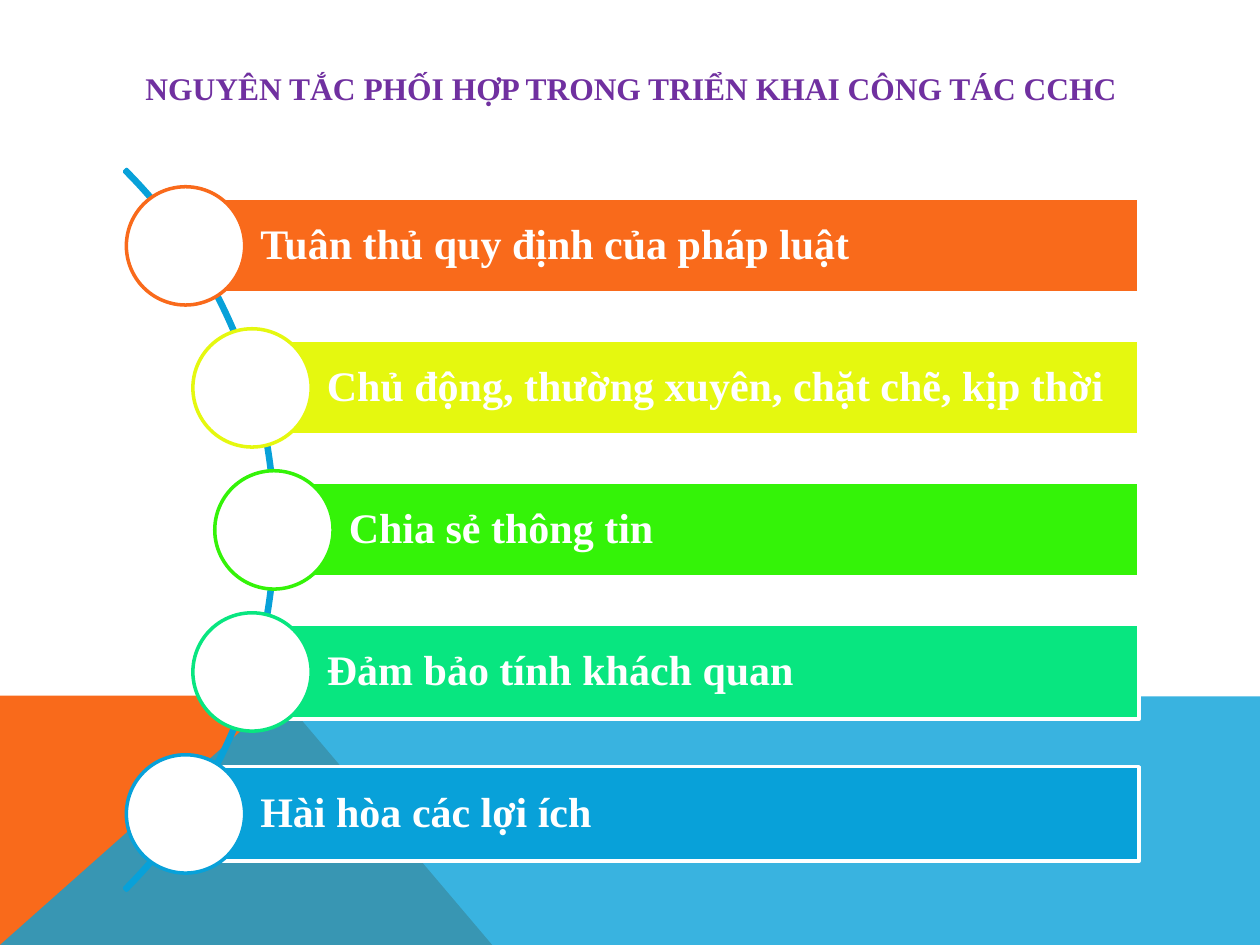
from lxml.etree import SubElement
from pptx import Presentation
from pptx.dml.color import RGBColor
from pptx.enum.shapes import MSO_SHAPE as Shape
from pptx.enum.text import MSO_ANCHOR as Anchor, PP_ALIGN as Align
from pptx.oxml.ns import qn
from pptx.util import Pt

# Content
COLORS = {
    "white": "FFFFFF", "purple": "7030A0", "orange": "F96A1B", "blue": "08A1D9",
    "yellow": "E5F80F", "green": "34F308", "mint": "08E680",
}
FONT = "Times New Roman"
TITLE = "NGUYÊN TẮC PHỐI HỢP TRONG TRIỂN KHAI CÔNG TÁC CCHC"
PRINCIPLES = [  # text, colour, circle centre x
    ("Tuân thủ quy định của pháp luật", "orange", 106),
    ("Chủ động, thường xuyên, chặt chẽ, kịp thời", "yellow", 144),
    ("Chia sẻ thông tin", "green", 156.5),
    ("Đảm bảo tính khách quan", "mint", 144),
    ("Hài hòa các lợi ích", "blue", 106),
]
ORANGE_BAND = [(0, 540), (0, 397.5), (160.5, 397.5), (281.3, 540)]
BLUE_BAND = [(0, 540), (160.5, 397.5), (720, 398), (720, 540)]

# Layout, in points
WIDTH, HEIGHT = 720, 540
BAR_RIGHT, BAR_HEIGHT = 651, 54
CIRCLE = 67.6
MIDDLE_Y, PITCH = 302.8, 81.15
ARC_CENTER_X, ARC_SIZE = -133.6, 582.5


def color(name):
    return RGBColor.from_string(COLORS[name])


def style(shape, fill=None, line=None):
    shape.shadow.inherit = False
    if fill:
        shape.fill.solid()
        shape.fill.fore_color.rgb = color(fill)
    else:
        shape.fill.background()
    if line:
        shape.line.color.rgb = color(line)
        shape.line.width = Pt(2)
    else:
        shape.line.fill.background()
    return shape


def add_shape(page, kind, left, top, width, height, fill=None, line=None):
    shape = page.shapes.add_shape(kind, Pt(left), Pt(top), Pt(width), Pt(height))
    return style(shape, fill, line)


def add_band(page, points, fill):
    corners = [(Pt(x), Pt(y)) for x, y in points]
    builder = page.shapes.build_freeform(*corners[0])
    builder.add_line_segments(corners[1:], close=True)
    return style(builder.convert_to_shape(), fill)


def write(box, text, size, ink, align):
    frame = box.text_frame
    frame.word_wrap = True
    frame.vertical_anchor = Anchor.MIDDLE
    para = frame.paragraphs[0]
    para.alignment = align
    span = para.add_run()
    span.text = text
    span.font.name = FONT
    span.font.size = Pt(size)
    span.font.bold = True
    span.font.color.rgb = color(ink)
    return frame


def main():
    deck = Presentation()
    deck.slide_width, deck.slide_height = Pt(WIDTH), Pt(HEIGHT)
    page = deck.slides.add_slide(deck.slide_layouts[6])

    # Background bands, the blue one slightly transparent
    add_band(page, ORANGE_BAND, "orange")
    blue_band = add_band(page, BLUE_BAND, "blue")
    tint = blue_band._element.spPr.find(qn("a:solidFill"))[0]
    SubElement(tint, qn("a:alpha")).set("val", "80000")

    # Title
    title = page.shapes.add_textbox(Pt(64.8), Pt(28.8), Pt(592), Pt(43.2))
    write(title, TITLE, 18, "purple", Align.CENTER)

    # Arc behind the circles
    arc = add_shape(page, Shape.BLOCK_ARC, ARC_CENTER_X - ARC_SIZE / 2,
                    MIDDLE_Y - ARC_SIZE / 2, ARC_SIZE, ARC_SIZE, line="blue")
    for index, value in enumerate((189, 27, 0.003)):
        arc.adjustments[index] = value

    # Bars with their circles
    for row, (text, hue, center_x) in enumerate(PRINCIPLES):
        center_y = MIDDLE_Y + (row - len(PRINCIPLES) // 2) * PITCH
        bar = add_shape(page, Shape.RECTANGLE, center_x, center_y - BAR_HEIGHT / 2,
                        BAR_RIGHT - center_x, BAR_HEIGHT, hue, "white")
        frame = write(bar, text, 24, "white", Align.LEFT)
        frame.margin_left = Pt(42.8)
        frame.margin_right = frame.margin_top = frame.margin_bottom = Pt(5)
        frame.paragraphs[0].line_spacing = 0.9
        add_shape(page, Shape.OVAL, center_x - CIRCLE / 2, center_y - CIRCLE / 2,
                  CIRCLE, CIRCLE, "white", hue)

    deck.save("out.pptx")


if __name__ == "__main__":
    main()
